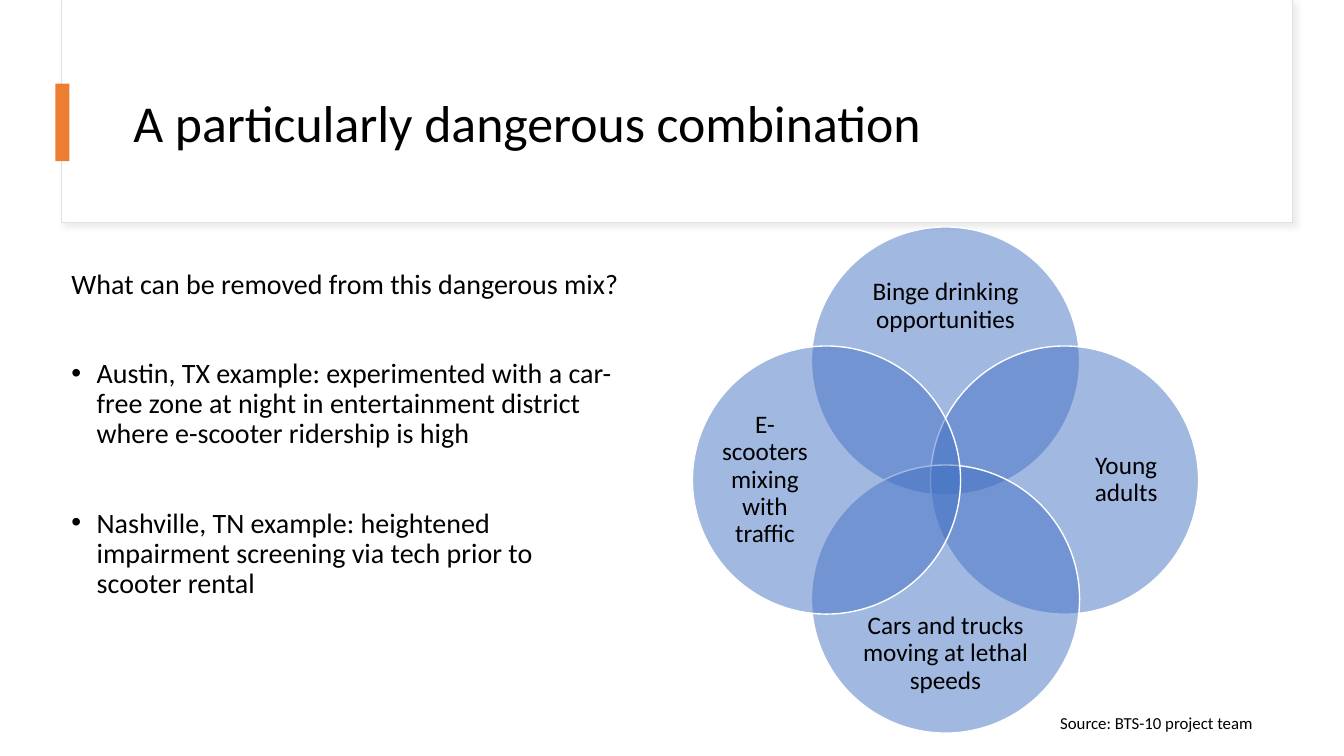
from lxml import etree
from pptx import Presentation, util as u
from pptx.dml.color import RGBColor
from pptx.enum import shapes, text
from pptx.oxml import ns

BLACK = RGBColor(0, 0, 0)
WHITE = RGBColor(255, 255, 255)
BORDER = RGBColor(0xE1, 0xE1, 0xE1)
SHADOW = RGBColor(0xD9, 0xD9, 0xD9)
ORANGE = RGBColor(0xED, 0x7D, 0x31)
BLUE = RGBColor(0x44, 0x72, 0xC4)
RECTANGLE = shapes.MSO_SHAPE.RECTANGLE
ELLIPSE = shapes.MSO_SHAPE.OVAL
LEFT = text.PP_ALIGN.LEFT
CENTER = text.PP_ALIGN.CENTER
TOP = text.MSO_ANCHOR.TOP
MIDDLE = text.MSO_ANCHOR.MIDDLE

CIRCLE_SIZE = 191.5
CENTER_X, CENTER_Y = 675.4, 342.9
CIRCLE_OFFSET = 85
WIDE_LABEL = (147, 60.5)
TALL_LABEL = (73.5, 147)
FACTORS = [
    ("Binge drinking opportunities", 0, -1, 124, WIDE_LABEL),
    ("Young adults", 1, 0, 129, TALL_LABEL),
    ("Cars and trucks moving at lethal speeds", 0, 1, 124, WIDE_LABEL),
    ("E-scooters mixing with traffic", -1, 0, 129, TALL_LABEL),
]
QUESTION = "What can be removed from this dangerous mix?"
EXAMPLES = [
    "Austin, TX example: experimented with a car-free zone at night in "
    "entertainment district where e-scooter ridership is high",
    "Nashville, TN example: heightened impairment screening via tech prior "
    "to scooter rental",
]


class SlideBuilder:
    font_name = "Calibri"

    def __init__(self, presentation):
        self.slide = presentation.slides.add_slide(presentation.slide_layouts[5])

    def shape(self, kind, box, fill, line=None, line_width=1, alpha=None):
        shape = self.slide.shapes.add_shape(kind, *map(u.Pt, box))
        shape.shadow.inherit = False
        shape.fill.solid()
        shape.fill.fore_color.rgb = fill
        if line is None:
            shape.line.fill.background()
        else:
            shape.line.color.rgb = line
            shape.line.width = u.Pt(line_width)
        if alpha is not None:
            fill_element = shape._element.spPr.find(ns.qn("a:solidFill"))
            color = fill_element.find(ns.qn("a:srgbClr"))
            etree.SubElement(color, ns.qn("a:alpha"), val=str(alpha * 1000))
        return shape

    def cast_shadow(self, shape, color, alpha, blur, distance, angle):
        effects = shape._element.spPr.find(ns.qn("a:effectLst"))
        shadow = etree.SubElement(
            effects, ns.qn("a:outerShdw"), blurRad=str(u.Pt(blur)),
            dist=str(u.Pt(distance)), dir=str(angle * 60000),
            algn="tl", rotWithShape="0")
        tint = etree.SubElement(shadow, ns.qn("a:srgbClr"), val=str(color))
        etree.SubElement(tint, ns.qn("a:alpha"), val=str(alpha * 1000))

    def add_words(self, paragraph, words, size, align=LEFT, spacing=0.9, before=0):
        paragraph.alignment = align
        paragraph.line_spacing = spacing
        paragraph.space_before = u.Pt(before)
        run = paragraph.add_run()
        run.text = words
        run.font.name = self.font_name
        run.font.size = u.Pt(size)
        run.font.color.rgb = BLACK

    def bullet(self, paragraph, indent):
        properties = paragraph._p.get_or_add_pPr()
        properties.set("marL", str(u.Pt(indent)))
        properties.set("indent", str(-u.Pt(indent)))
        etree.SubElement(properties, ns.qn("a:buFont"), typeface="Arial")
        etree.SubElement(properties, ns.qn("a:buChar"), char="•")

    def title(self, words, box, size):
        title = self.slide.shapes.title
        title.left, title.top, title.width, title.height = map(u.Pt, box)
        frame = title.text_frame
        frame.auto_size = text.MSO_AUTO_SIZE.NONE
        frame.vertical_anchor = MIDDLE
        self.add_words(frame.paragraphs[0], words, size)
        tree = title._element.getparent()
        tree.remove(title._element)
        tree.append(title._element)

    def text_box(self, box, anchor=TOP, inset=None):
        frame = self.slide.shapes.add_textbox(*map(u.Pt, box)).text_frame
        frame.word_wrap = True
        frame.vertical_anchor = anchor
        if inset is not None:
            frame.margin_left = frame.margin_right = u.Pt(inset)
            frame.margin_top = frame.margin_bottom = u.Pt(inset)
        return frame

    def label(self, words, box, size, align=LEFT, spacing=1, anchor=TOP, inset=None):
        frame = self.text_box(box, anchor, inset)
        self.add_words(frame.paragraphs[0], words, size, align, spacing)

    def body(self, lead, items, box, size, gap, indent):
        frame = self.text_box(box)
        self.add_words(frame.paragraphs[0], lead, size)
        for item in items:
            paragraph = frame.add_paragraph()
            self.add_words(paragraph, item, size, before=gap)
            self.bullet(paragraph, indent)


def centered_box(x, y, width, height):
    return x - width / 2, y - height / 2, width, height


def main():
    presentation = Presentation()
    presentation.slide_width = u.Pt(960)
    presentation.slide_height = u.Pt(540)
    builder = SlideBuilder(presentation)

    panel = builder.shape(RECTANGLE, (44, 0, 879, 159), WHITE, BORDER, 0.75)
    builder.cast_shadow(panel, SHADOW, alpha=50, blur=4, distance=3, angle=45)
    builder.shape(RECTANGLE, (44.5, 0, 878, 158.5), WHITE)
    builder.title("A particularly dangerous combination", (88, 43.2, 800.5, 93), 37)
    builder.shape(RECTANGLE, (39.5, 59.8, 10, 55.4), ORANGE)
    builder.body(QUESTION, EXAMPLES, (44, 189.5, 407.5, 291), size=20, gap=42, indent=18)

    for words, across, down, label_offset, label_size in FACTORS:
        circle = centered_box(CENTER_X + across * CIRCLE_OFFSET,
                              CENTER_Y + down * CIRCLE_OFFSET, CIRCLE_SIZE, CIRCLE_SIZE)
        builder.shape(ELLIPSE, circle, BLUE, WHITE, alpha=50)
        label = centered_box(CENTER_X + across * label_offset,
                             CENTER_Y + down * label_offset, *label_size)
        builder.label(words, label, 18, CENTER, 0.9, MIDDLE, inset=0)

    builder.label("Source: BTS-10 project team", (750.2, 505.4, 165.6, 34), 12)
    presentation.save("out.pptx")


if __name__ == "__main__":
    main()
